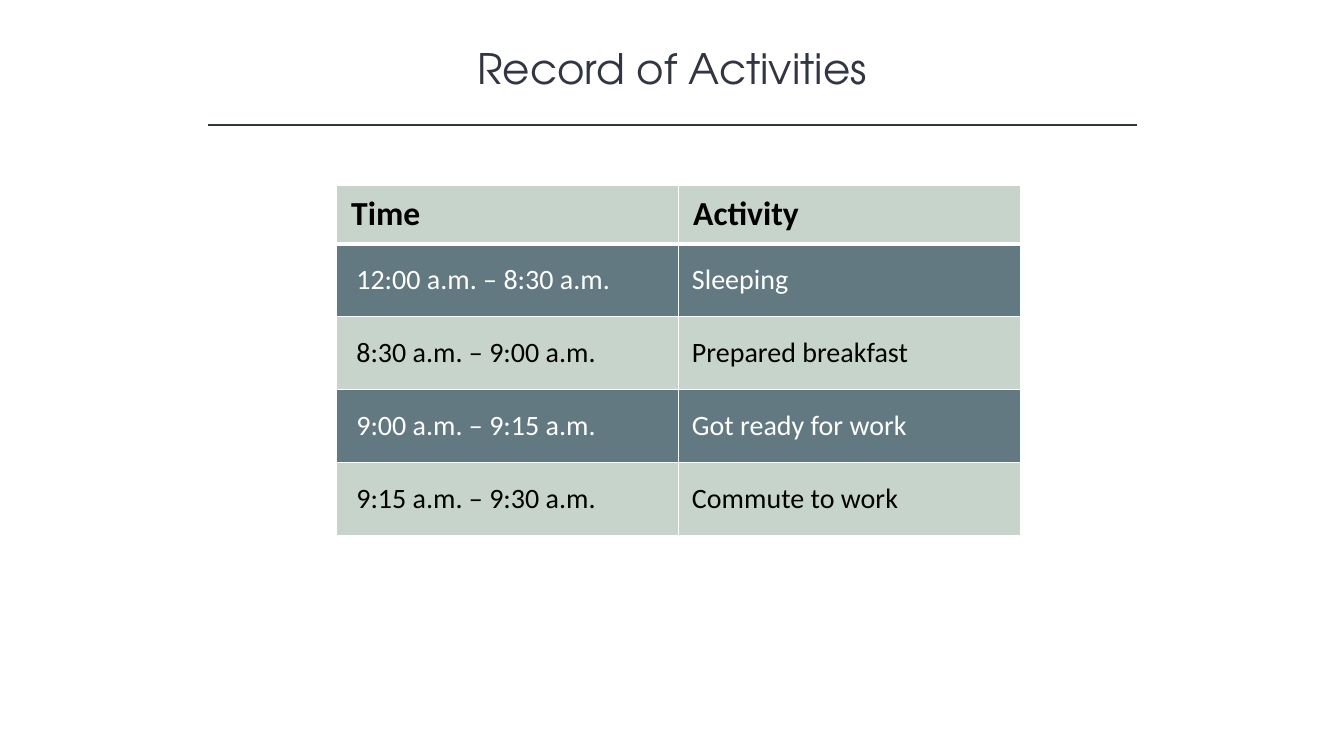
from lxml import etree
from pptx import Presentation
from pptx.dml.color import RGBColor
from pptx.enum.shapes import MSO_CONNECTOR
from pptx.enum.text import MSO_ANCHOR, PP_ALIGN
from pptx.oxml.ns import qn
from pptx.util import Cm, Pt

LINE = MSO_CONNECTOR.STRAIGHT
MIDDLE = MSO_ANCHOR.MIDDLE
LEFT, CENTER = PP_ALIGN.LEFT, PP_ALIGN.CENTER

ROWS = [
    ("Time", "Activity"),
    ("12:00 a.m. – 8:30 a.m.", "Sleeping"),
    ("8:30 a.m. – 9:00 a.m.", "Prepared breakfast"),
    ("9:00 a.m. – 9:15 a.m.", "Got ready for work"),
    ("9:15 a.m. – 9:30 a.m.", "Commute to work"),
]


def color(code):
    return RGBColor.from_string(code)


def write(frame, text, font="Calibri", size=20, fill="000000", bold=False, align=LEFT):
    frame.word_wrap = True
    frame.vertical_anchor = MIDDLE
    para = frame.paragraphs[0]
    para.alignment = align
    run = para.add_run()
    run.text = text
    run.font.name = font
    run.font.size = Pt(size)
    run.font.bold = bold
    run.font.color.rgb = color(fill)


class Deck:
    ink, pale, dark, white = "323542", "C7D4CB", "627981", "FFFFFF"

    def __init__(self, show):
        self.slide = show.slides.add_slide(show.slide_layouts[5])

    def title(self, text, left, top, width, height):
        box = self.slide.shapes.title
        box.left, box.top, box.width, box.height = map(Cm, (left, top, width, height))
        write(box.text_frame, text, font="TeX Gyre Adventor", size=30,
              fill=self.ink, align=CENTER)

    def rule(self, left, right, top):
        line = self.slide.shapes.add_connector(LINE, Cm(left), Cm(top), Cm(right), Cm(top))
        line.line.color.rgb = color(self.ink)
        line.line.width = Pt(1)
        etree.SubElement(line._element.spPr, qn("a:effectLst"))

    def edge(self, cell, spot, side, width):
        line = etree.Element(qn(f"a:ln{side}"), w=str(Pt(width)))
        fill = etree.SubElement(line, qn("a:solidFill"))
        etree.SubElement(fill, qn("a:srgbClr"), val=self.white)
        cell._tc.get_or_add_tcPr().insert(spot, line)

    def cell(self, cell, text, row, col):
        head, band = row == 0, row % 2 == 1
        cell.fill.solid()
        cell.fill.fore_color.rgb = color(self.dark if band else self.pale)
        cell.margin_left = Cm(0.37 if head else (0.5, 0.34)[col])
        cell.margin_right = Cm(0.18)
        cell.margin_top = cell.margin_bottom = 0
        cell.vertical_anchor = MIDDLE
        write(cell.text_frame, text, size=24 if head else 20, bold=head,
              fill=self.white if band else "000000")
        # A thick edge parts the header from the body
        thick = {(0, "B"), (1, "T")}
        for spot, side in enumerate("LRTB"):
            self.edge(cell, spot, side, 3 if (row, side) in thick else 1)

    def table(self, rows, left, top, width, head, body):
        count = len(rows[0])
        high = head + body * (len(rows) - 1)
        grid = self.slide.shapes.add_table(
            len(rows), count, Cm(left), Cm(top), Cm(width * count), Cm(high)).table
        for col in grid.columns:
            col.width = Cm(width)
        for i, row in enumerate(rows):
            grid.rows[i].height = Cm(body if i else head)
            for j, text in enumerate(row):
                self.cell(grid.cell(i, j), text, i, j)


def main():
    show = Presentation()
    show.slide_width, show.slide_height = Cm(33.87), Cm(19.05)
    deck = Deck(show)

    # Heading
    deck.title("Record of Activities", 4.24, 0.94, 25.4, 1.55)
    deck.rule(5.23, 28.65, 3.15)

    # Activity log
    deck.table(ROWS, left=8.48, top=4.66, width=8.62, head=1.48, body=1.84)

    show.save("out.pptx")


if __name__ == "__main__":
    main()
